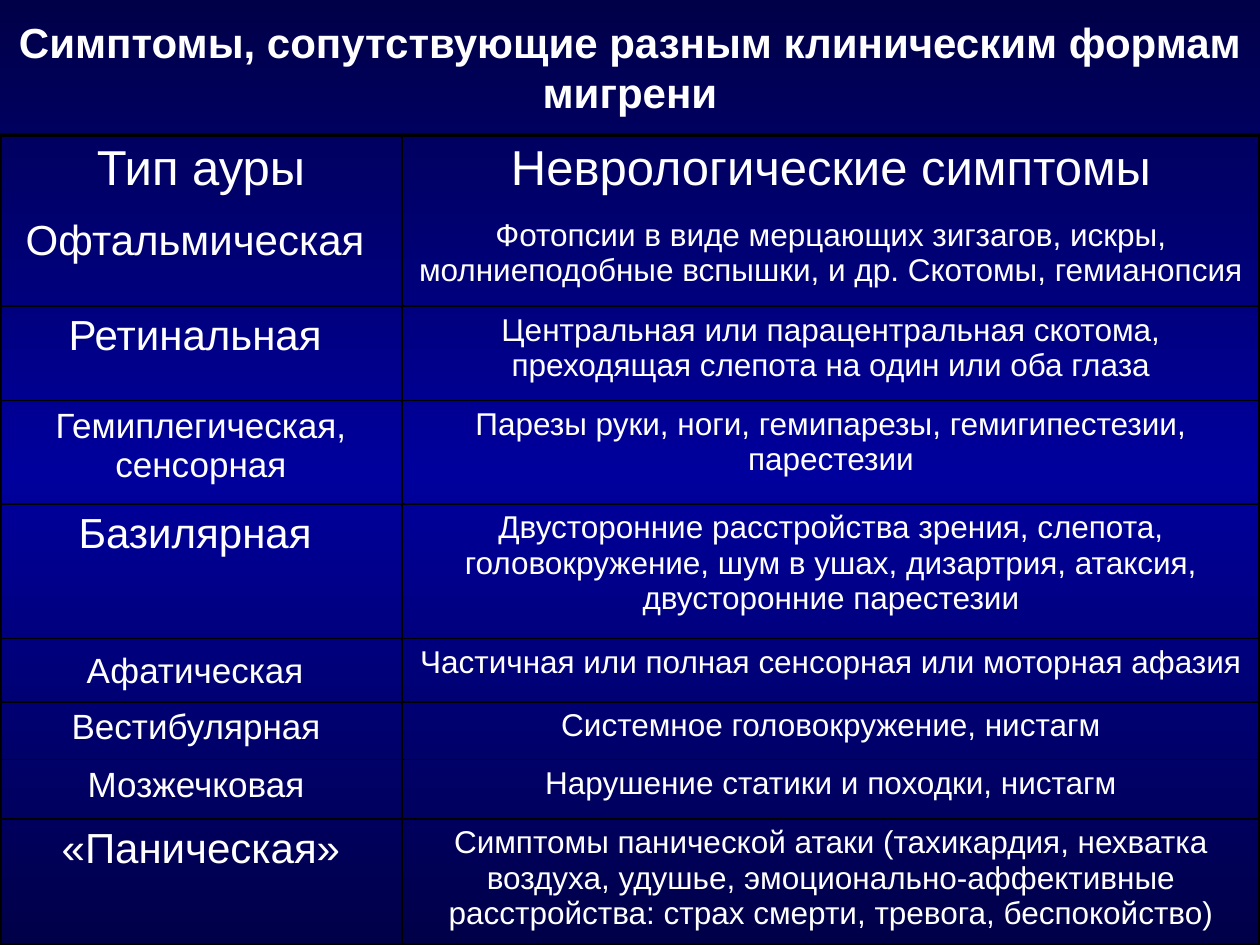
"""Build a slide with a table of migraine aura types and their symptoms."""
from copy import deepcopy

from pptx import Presentation
from pptx.dml.color import RGBColor
from pptx.enum.text import MSO_ANCHOR as Anchor, PP_ALIGN as Align
from pptx.oxml.ns import qn
from pptx.util import Inches, Pt
from lxml.etree import SubElement

FONT, WHITE, BLACK = "Arial", "FFFFFF", "000000"
GRADIENT = [(0, "000048"), (0.5, "00009C"), (1, "000048")]
THICK, THIN = 2.25, 1
TITLE = "Симптомы, сопутствующие разным клиническим формам мигрени"
COLS = [3.19, 6.81]
TABLE_TOP = 1.07
ROWS = [
    (0.61, 28, "Тип ауры", 28, "Неврологические симптомы"),
    (0.75, 24, "Офтальмическая ", 18,
     "Фотопсии в виде мерцающих зигзагов, искры, молниеподобные вспышки, и др. Скотомы, гемианопсия"),
    (0.75, 24, "Ретинальная ", 18,
     "Центральная или парацентральная скотома, преходящая слепота на один или оба глаза"),
    (0.82, 20, "Гемиплегическая, сенсорная", 18,
     "Парезы руки, ноги, гемипарезы, гемигипестезии, парестезии"),
    (1.07, 24, "Базилярная ", 18,
     "Двусторонние расстройства зрения, слепота, головокружение, шум в ушах, дизартрия, атаксия, "
     "двусторонние парестезии"),
    (0.49, 20, "Афатическая", 18, "Частичная или полная сенсорная или моторная афазия"),
    (0.46, 20, "Вестибулярная ", 18, "Системное головокружение, нистагм"),
    (0.47, 20, "Мозжечковая ", 18, "Нарушение статики и походки, нистагм"),
    (0.61, 24, "«Паническая»", 18,
     "Симптомы панической атаки (тахикардия, нехватка воздуха, удушье, эмоционально-аффективные "
     "расстройства: страх смерти, тревога, беспокойство)"),
]
TALL_SPACE_ROW = 5


def rgb(value):
    return RGBColor.from_string(value)


def write(tf, text, size, bold=False):
    p = tf.paragraphs[0]
    p.alignment = Align.CENTER
    p.font.name, p.font.size, p.font.bold = FONT, Pt(size), bold
    p.font.color.rgb = rgb(WHITE)
    p.add_run().text = text
    return p


def set_borders(cell, widths):
    props = cell._tc.get_or_add_tcPr()
    for i, (side, width) in enumerate(widths.items()):
        ln = SubElement(props, qn(f"a:ln{side}"), w=str(Pt(width)))
        props.remove(ln)
        props.insert(i, ln)
        if width:
            fill = SubElement(ln, qn("a:solidFill"))
            SubElement(fill, qn("a:srgbClr"), val=BLACK)
        else:
            SubElement(ln, qn("a:noFill"))


def set_background(s):
    fill = s.background.fill
    fill.gradient()
    fill.gradient_angle = 90
    stops = s._element.xpath(".//a:gsLst")[0]
    stops.append(deepcopy(stops[-1]))
    for stop, (position, color) in zip(fill.gradient_stops, GRADIENT):
        stop.position = position
        stop.color.rgb = rgb(color)


def add_title(s):
    tf = s.shapes.add_textbox(0, Inches(0.3), Inches(10), Inches(0.46)).text_frame
    tf.word_wrap = True
    tf.vertical_anchor = Anchor.MIDDLE
    write(tf, TITLE, 24, bold=True)


def add_symptoms(s):
    heights = [row[0] for row in ROWS]
    table = s.shapes.add_table(len(ROWS), len(COLS), 0, Inches(TABLE_TOP),
                               Inches(sum(COLS)), Inches(sum(heights))).table
    table.first_row = table.horz_banding = False
    for column, width in zip(table.columns, COLS):
        column.width = Inches(width)
    last = len(ROWS) - 1
    for r, (height, *content) in enumerate(ROWS):
        table.rows[r].height = Inches(height)
        for c in range(len(COLS)):
            size, text = content[2 * c:2 * c + 2]
            cell = table.cell(r, c)
            cell.fill.background()
            p = write(cell.text_frame, text, size)
            if (r, c) == (TALL_SPACE_ROW, 0):
                space = p.add_run()
                space.text, space.font.size = " ", Pt(24)
            set_borders(cell, {
                "L": THIN if c else THICK,
                "R": THICK if c else THIN,
                "T": {0: THICK, 1: 0}.get(r, THIN),
                "B": {0: 0, last: THICK}.get(r, THIN),
            })


def main():
    prs = Presentation()
    prs.slide_width, prs.slide_height = Inches(10), Inches(7.5)
    s = prs.slides.add_slide(prs.slide_layouts[6])
    set_background(s)
    add_title(s)
    add_symptoms(s)
    prs.save("out.pptx")


if __name__ == "__main__":
    main()
